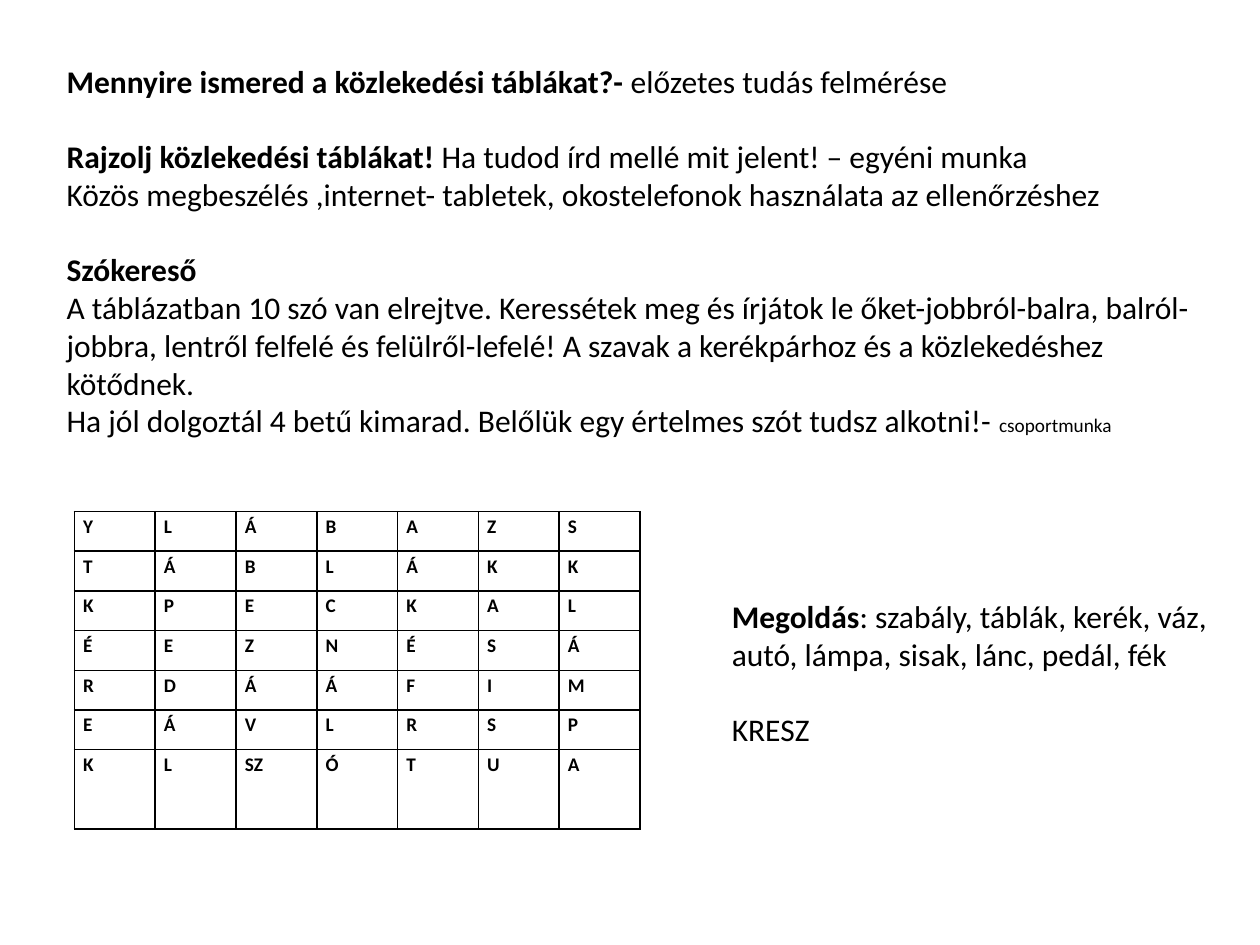
from dataclasses import dataclass

import pptx
import pptx.dml.color
import pptx.enum.text
import pptx.oxml.ns
import pptx.util
from lxml import etree

Inches = pptx.util.Inches
Pt = pptx.util.Pt


@dataclass(frozen=True)
class Theme:
    font: str = "Calibri"
    ink: str = "000000"
    body: float = 18
    small: float = 11
    paragraph_gap: float = 21.5
    border: float = 1
    letter_spacing: float = 1.15


THEME = Theme()

BOLD, PLAIN, SMALL = "bold", "plain", "small"

TASK_LINES = [
    (False, [("Mennyire ismered a közlekedési táblákat?- ", BOLD),
             ("előzetes tudás felmérése", PLAIN)]),
    (True, [("Rajzolj közlekedési táblákat! ", BOLD),
            ("Ha tudod írd mellé mit jelent! – egyéni munka", PLAIN)]),
    (False, [("Közös megbeszélés ,internet- tabletek, okostelefonok használata "
              "az ellenőrzéshez", PLAIN)]),
    (True, [("Szókereső", BOLD)]),
    (False, [("A táblázatban 10 szó van elrejtve. Keressétek meg és írjátok le "
              "őket-jobbról-balra, balról-jobbra, lentről felfelé és "
              "felülről-lefelé! A szavak a kerékpárhoz és a közlekedéshez "
              "kötődnek.", PLAIN)]),
    (False, [("Ha jól dolgoztál 4 betű kimarad. Belőlük egy értelmes szót tudsz "
              "alkotni!- ", PLAIN), ("csoportmunka", SMALL)]),
]

SOLUTION_LINES = [
    (False, [("Megoldás", BOLD), (": szabály, táblák, kerék, váz,", PLAIN)]),
    (False, [("autó, lámpa, sisak, lánc, pedál, fék", PLAIN)]),
    (True, [("KRESZ", PLAIN)]),
]

LETTER_ROWS = [
    "Y L Á B A Z S",
    "T Á B L Á K K",
    "K P E C K A L",
    "É E Z N É S Á",
    "R D Á Á F I M",
    "E Á V L R S P",
    "K L SZ Ó T U A",
]


def style_span(span, size, bold):
    span.font.name = THEME.font
    span.font.size = Pt(size)
    span.font.bold = bold
    span.font.color.rgb = pptx.dml.color.RGBColor.from_string(THEME.ink)


def add_text(page, left, top, width, height, lines, wrap):
    box = page.shapes.add_textbox(left, top, width, height)
    frame = box.text_frame
    frame.word_wrap = wrap
    frame.auto_size = pptx.enum.text.MSO_AUTO_SIZE.SHAPE_TO_FIT_TEXT
    for index, (gap_before, parts) in enumerate(lines):
        para = frame.add_paragraph() if index else frame.paragraphs[0]
        if gap_before:
            para.space_before = Pt(THEME.paragraph_gap)
        for text, style in parts:
            span = para.add_run()
            span.text = text
            size = THEME.small if style == SMALL else THEME.body
            style_span(span, size, style == BOLD)


def add_borders(cell):
    properties = cell._tc.get_or_add_tcPr()
    qn = pptx.oxml.ns.qn
    for side in ("a:lnL", "a:lnR", "a:lnT", "a:lnB"):
        line = etree.SubElement(properties, qn(side), w=str(Pt(THEME.border)))
        fill = etree.SubElement(line, qn("a:solidFill"))
        etree.SubElement(fill, qn("a:srgbClr"), val=THEME.ink)


def add_word_search(page, left, top, width, height):
    letters = [row.split() for row in LETTER_ROWS]
    row_count, column_count = len(letters), len(letters[0])
    table = page.shapes.add_table(
        row_count, column_count, left, top, width, height).table
    table.first_row = False
    table.horz_banding = False
    for column in table.columns:
        column.width = int(width / column_count)
    row_height = int(height / (row_count + 1))
    for row in table.rows:
        row.height = row_height
    table.rows[row_count - 1].height = 2 * row_height
    for row_index, row in enumerate(letters):
        for column_index, letter in enumerate(row):
            cell = table.cell(row_index, column_index)
            cell.margin_left = cell.margin_right = Inches(0.07)
            cell.margin_top = cell.margin_bottom = 0
            add_borders(cell)
            cell.fill.background()
            cell.text_frame.text = letter
            para = cell.text_frame.paragraphs[0]
            para.line_spacing = THEME.letter_spacing
            style_span(para.runs[0], THEME.small, True)


def main():
    deck = pptx.Presentation()
    deck.slide_width = Inches(10)
    deck.slide_height = Inches(7.5)
    page = deck.slides.add_slide(deck.slide_layouts[6])
    add_text(page, Inches(0.43), Inches(0.44), Inches(9.45), Inches(3.43),
             TASK_LINES, True)
    add_word_search(page, Inches(0.59), Inches(4.06), Inches(4.49), Inches(2.52))
    add_text(page, Inches(5.71), Inches(4.69), Inches(3.99), Inches(1.31),
             SOLUTION_LINES, False)
    deck.save("out.pptx")


if __name__ == "__main__":
    main()
